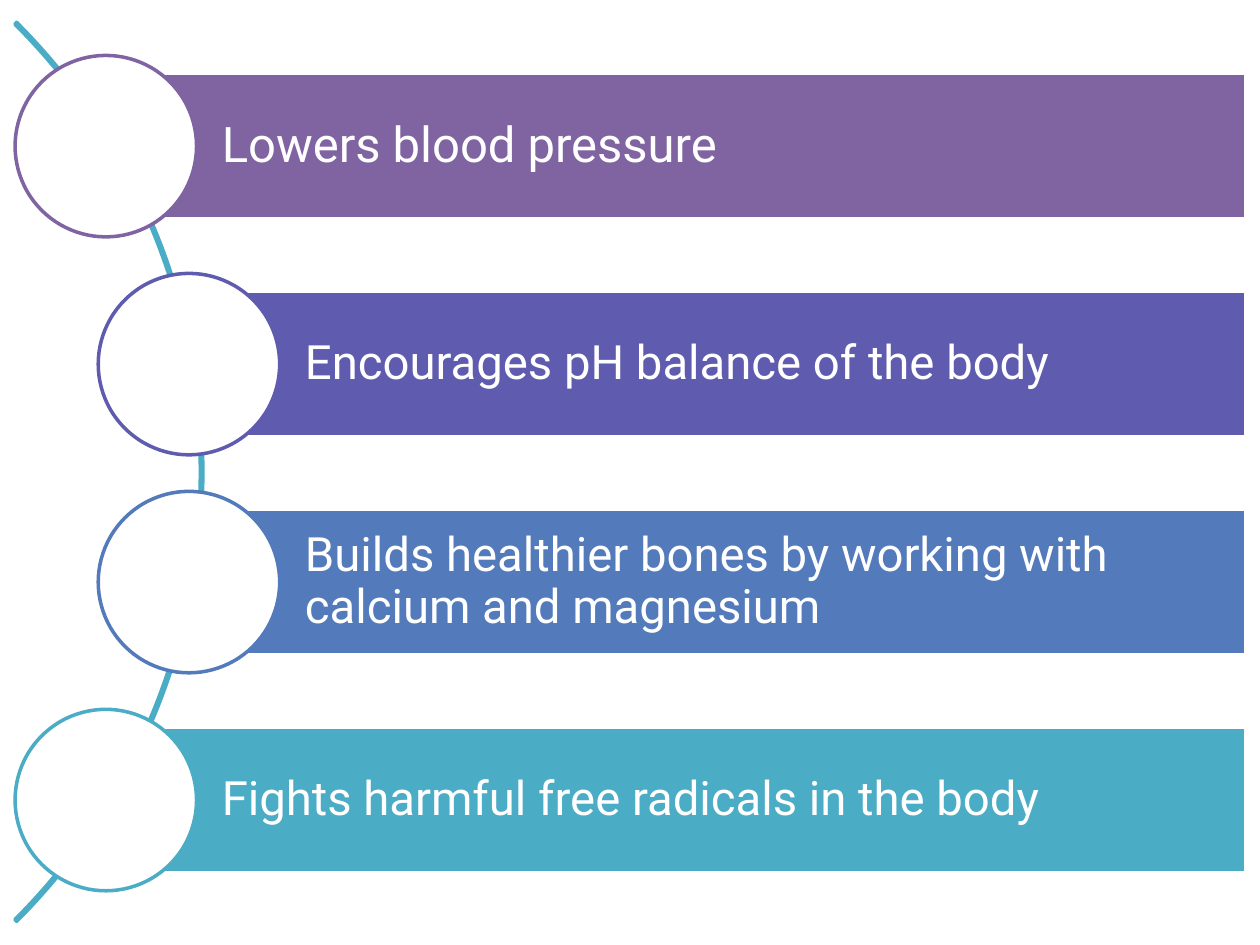
"""Build a slide of four health benefits strung along an arc."""
from dataclasses import dataclass

from pptx import Presentation
from pptx.dml.color import RGBColor
from pptx.enum.shapes import MSO_SHAPE
from pptx.enum.text import MSO_ANCHOR, PP_ALIGN
from pptx.shapes.autoshape import Shape
from pptx.slide import Slide
from pptx.util import Inches, Pt


@dataclass(frozen=True)
class Theme:
    font: str = "Roboto"
    white: str = "FFFFFF"
    arc: str = "4BACC6"
    line: float = 2


@dataclass(frozen=True)
class Row:
    text: str
    color: str
    left: float
    size: int = 27


THEME = Theme()
OUTER, INNER = 0.84, 1.5
RIGHT = 9.89
FIRST, STEP = 1.16, 1.73
HEIGHT = 1.15
DISC = 1.44
ARC = 10.09

ROWS = (
    Row("Lowers blood pressure", "8064A2", OUTER, 28),
    Row("Encourages pH balance of the body", "5F5BAE", INNER),
    Row("Builds healthier bones by working with calcium and magnesium", "537ABA", INNER),
    Row("Fights harmful free radicals in the body", "4BACC6", OUTER),
)


def add_form(slide: Slide, kind: MSO_SHAPE, left: float, top: float, width: float,
             height: float, fill: str | None, line: str) -> Shape:
    form = slide.shapes.add_shape(
        kind, Inches(left), Inches(top), Inches(width), Inches(height))
    form.shadow.inherit = False
    if fill:
        form.fill.solid()
        form.fill.fore_color.rgb = RGBColor.from_string(fill)
    else:
        form.fill.background()
    form.line.color.rgb = RGBColor.from_string(line)
    form.line.width = Pt(THEME.line)
    return form


def add_arc(slide: Slide) -> None:
    arc = add_form(slide, MSO_SHAPE.BLOCK_ARC, -8.48, -1.3, ARC, ARC, None, THEME.arc)
    for index, value in enumerate((189, 27, 0.002)):
        arc.adjustments[index] = value


def add_label(bar: Shape, row: Row) -> None:
    frame = bar.text_frame
    frame.word_wrap = True
    frame.vertical_anchor = MSO_ANCHOR.MIDDLE
    frame.margin_left = Inches(0.92)
    frame.margin_top = frame.margin_right = frame.margin_bottom = Inches(0.07)
    para = frame.paragraphs[0]
    para.alignment = PP_ALIGN.LEFT
    para.line_spacing = 0.9
    run = para.add_run()
    run.text = row.text
    run.font.name = THEME.font
    run.font.size = Pt(row.size)
    run.font.color.rgb = RGBColor.from_string(THEME.white)


def add_row(slide: Slide, row: Row, middle: float) -> None:
    bar = add_form(slide, MSO_SHAPE.RECTANGLE, row.left, middle - HEIGHT / 2,
                   RIGHT - row.left, HEIGHT, row.color, THEME.white)
    add_label(bar, row)
    add_form(slide, MSO_SHAPE.OVAL, row.left - DISC / 2, middle - DISC / 2,
             DISC, DISC, THEME.white, row.color)


def main() -> None:
    deck = Presentation()
    deck.slide_width, deck.slide_height = Inches(10), Inches(7.5)
    slide = deck.slides.add_slide(deck.slide_layouts[6])
    add_arc(slide)
    for index, row in enumerate(ROWS):
        add_row(slide, row, FIRST + index * STEP)
    deck.save("out.pptx")


if __name__ == "__main__":
    main()
